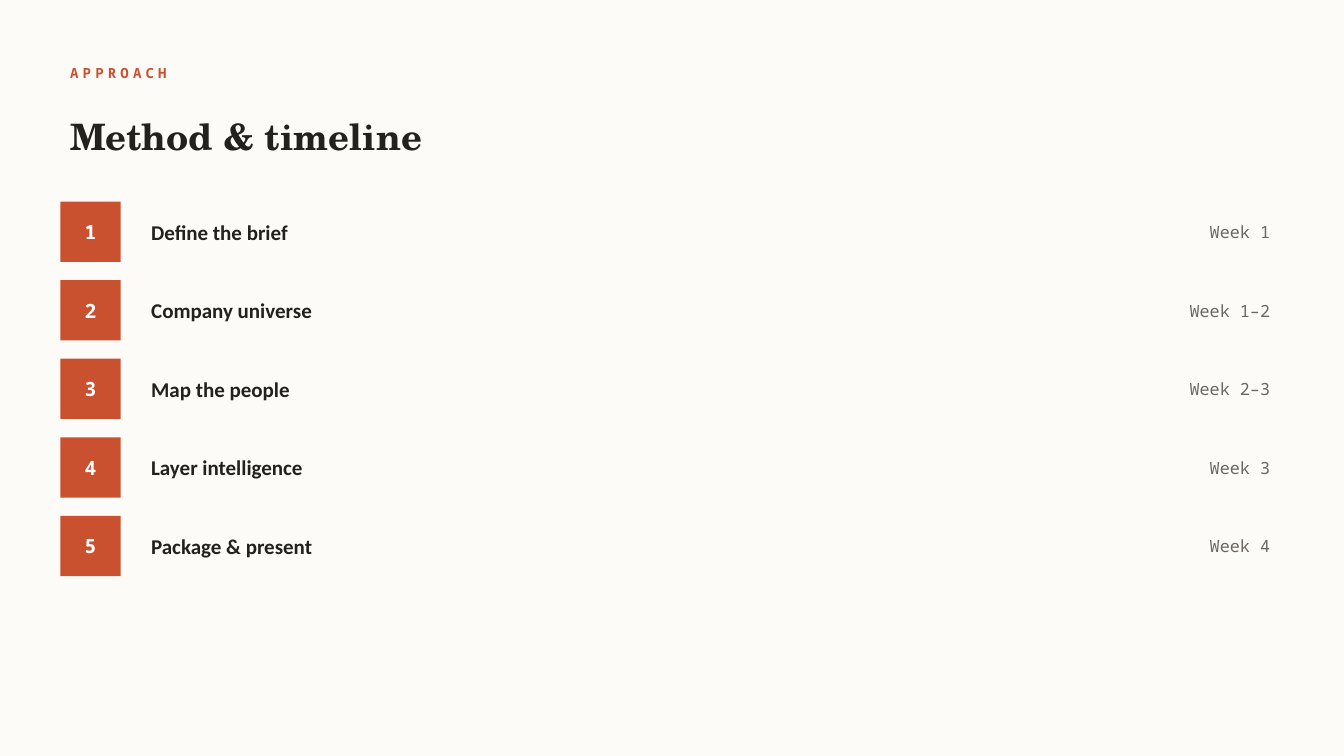
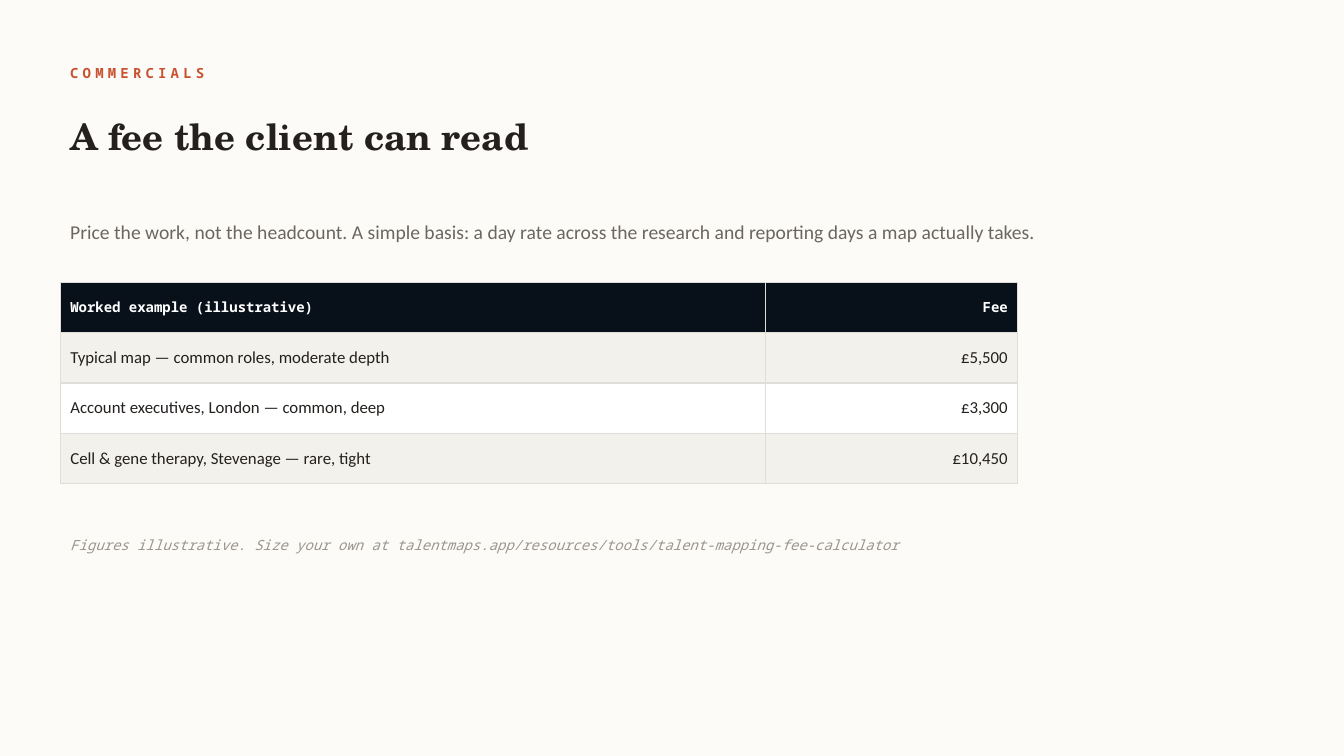
from pptx import Presentation
from pptx import util as u
from pptx.dml.color import RGBColor
from pptx.enum import shapes, text
from pptx.oxml.ns import qn
from lxml import etree

INK = {
    "paper": "FCFBF8", "rust": "C9512F", "text": "23201D", "grey": "6B6660",
    "pale": "9A958E", "white": "FFFFFF", "navy": "081019", "band": "F3F1EC",
    "rule": "E0DED8",
}
SANS, MONO, SERIF = "Calibri", "Noto Sans Mono", "TeX Gyre Schola"
LEFT, WIDE = 1.52, 30.73
RIGHT = text.PP_ALIGN.RIGHT
MID = text.MSO_ANCHOR.MIDDLE

STEPS = [
    ("Define the brief", "Week 1"),
    ("Company universe", "Week 1–2"),
    ("Map the people", "Week 2–3"),
    ("Layer intelligence", "Week 3"),
    ("Package & present", "Week 4"),
]
FEES = [
    ("Worked example (illustrative)", "Fee"),
    ("Typical map — common roles, moderate depth", "£5,500"),
    ("Account executives, London — common, deep", "£3,300"),
    ("Cell & gene therapy, Stevenage — rare, tight", "£10,450"),
]


def hue(name):
    return RGBColor.from_string(INK[name])


def box(x, y, w, h):
    return [u.Cm(v) for v in (x, y, w, h)]


def paint(thing, name):
    thing.fill.solid()
    thing.fill.fore_color.rgb = hue(name)


def write(frame, words, size=12, font=SANS, color="text", bold=False,
          slant=False, align=text.PP_ALIGN.LEFT, space=0):
    frame.word_wrap = True
    par = frame.paragraphs[0]
    par.alignment = align
    run = par.add_run()
    run.text = words
    run.font.size = u.Pt(size)
    run.font.name = font
    run.font.bold = bold
    run.font.italic = slant
    run.font.color.rgb = hue(color)
    if space:
        run.font._element.set("spc", str(space * 100))


def label(slide, words, area, **style):
    frame = slide.shapes.add_textbox(*box(*area)).text_frame
    frame.vertical_anchor = MID
    write(frame, words, **style)


def badge(slide, words, x, y, side):
    tile = slide.shapes.add_shape(shapes.MSO_SHAPE.RECTANGLE,
                                  *box(x, y, side, side))
    tile.shadow.inherit = False
    paint(tile, "rust")
    tile.line.fill.background()
    tile.text_frame.vertical_anchor = MID
    write(tile.text_frame, words, size=14, font=MONO, color="white",
          bold=True, align=text.PP_ALIGN.CENTER)


def edge(cell):
    props = cell._tc.get_or_add_tcPr()
    for side in ("lnL", "lnR", "lnT", "lnB"):
        line = etree.SubElement(props, qn("a:" + side), w=str(u.Pt(1)))
        fill = etree.SubElement(line, qn("a:solidFill"))
        etree.SubElement(fill, qn("a:srgbClr"), val=INK["rule"])


def grid(slide, rows, x, y, widths, height):
    area = box(x, y, sum(widths), height * len(rows))
    table = slide.shapes.add_table(len(rows), len(widths), *area).table
    table.first_row = table.horz_banding = False
    for col, width in zip(table.columns, widths):
        col.width = u.Cm(width)
    for r, row in enumerate(rows):
        table.rows[r].height = u.Cm(height)
        if r == 0:
            back = "navy"
            style = dict(size=10, font=MONO, color="white", bold=True)
        else:
            back = "band" if r % 2 else "white"
            style = dict(size=12)
        for c, words in enumerate(row):
            cell = table.cell(r, c)
            edge(cell)
            paint(cell, back)
            cell.vertical_anchor = MID
            side = RIGHT if c else text.PP_ALIGN.LEFT
            write(cell.text_frame, words, align=side, **style)


def page(deck, kicker, title):
    slide = deck.slides.add_slide(deck.slide_layouts[6])
    paint(slide.background, "paper")
    label(slide, kicker, (LEFT, 1.4, WIDE, 0.89), size=10, font=MONO,
          color="rust", bold=True, space=3)
    label(slide, title, (LEFT, 2.41, WIDE, 2.03), size=26, font=SERIF,
          bold=True)
    return slide


def method(deck):
    slide = page(deck, "APPROACH", "Method & timeline")
    top, pitch, side = 5.08, 1.98, 1.52
    for i, (step, week) in enumerate(STEPS):
        y = top + i * pitch
        badge(slide, str(i + 1), LEFT, y, side)
        label(slide, step, (3.56, y, 15.24, side), size=15, bold=True)
        label(slide, week, (19.05, y, 13.21, side), font=MONO,
              color="grey", align=RIGHT)


def pricing(deck):
    slide = page(deck, "COMMERCIALS", "A fee the client can read")
    label(slide, "Price the work, not the headcount. A simple basis: a day "
          "rate across the research and reporting days a map actually takes.",
          (LEFT, 4.95, WIDE, 1.78), size=14, color="grey")
    grid(slide, FEES, LEFT, 7.11, (17.78, 6.35), 1.27)
    label(slide, "Figures illustrative. Size your own at "
          "talentmaps.app/resources/tools/talent-mapping-fee-calculator",
          (LEFT, 13.21, WIDE, 1.02), size=10, font=MONO, color="pale",
          slant=True)


def main():
    deck = Presentation()
    deck.slide_width, deck.slide_height = u.Cm(33.87), u.Cm(19.05)
    method(deck)
    pricing(deck)
    deck.save("out.pptx")


if __name__ == "__main__":
    main()
